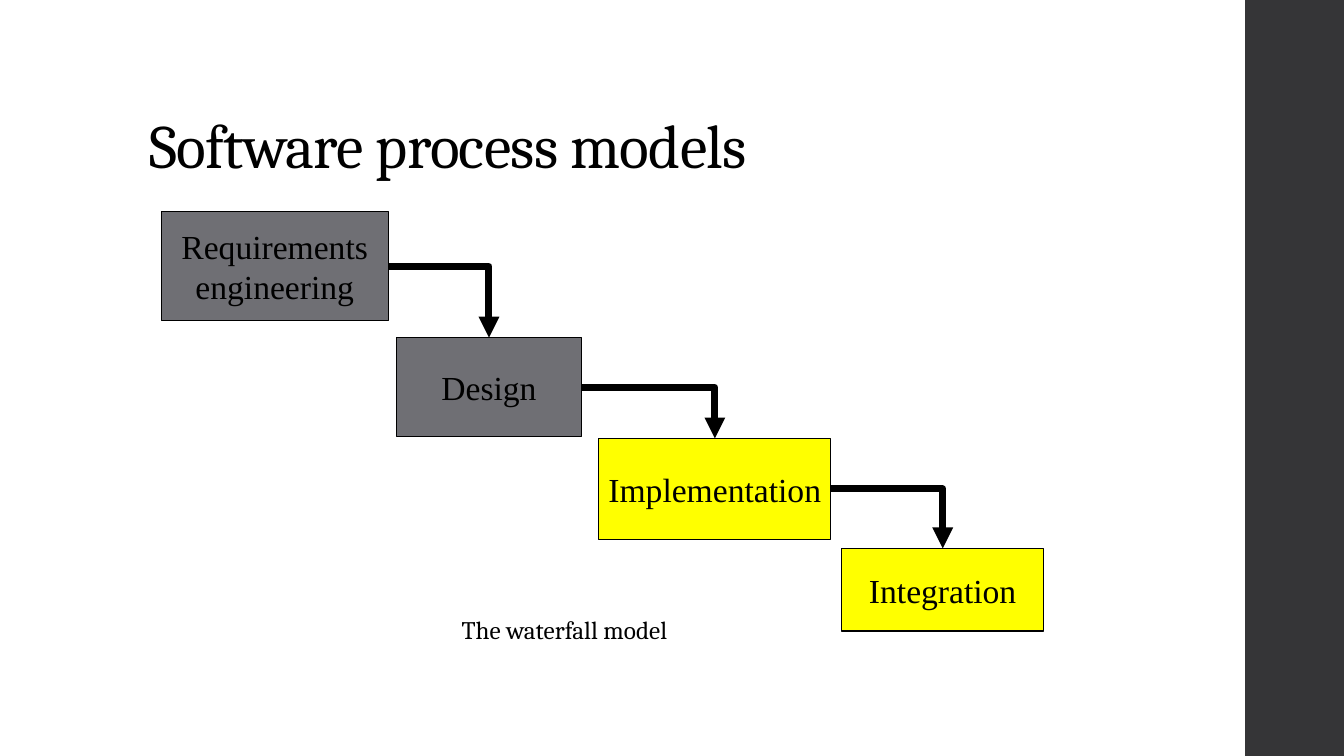
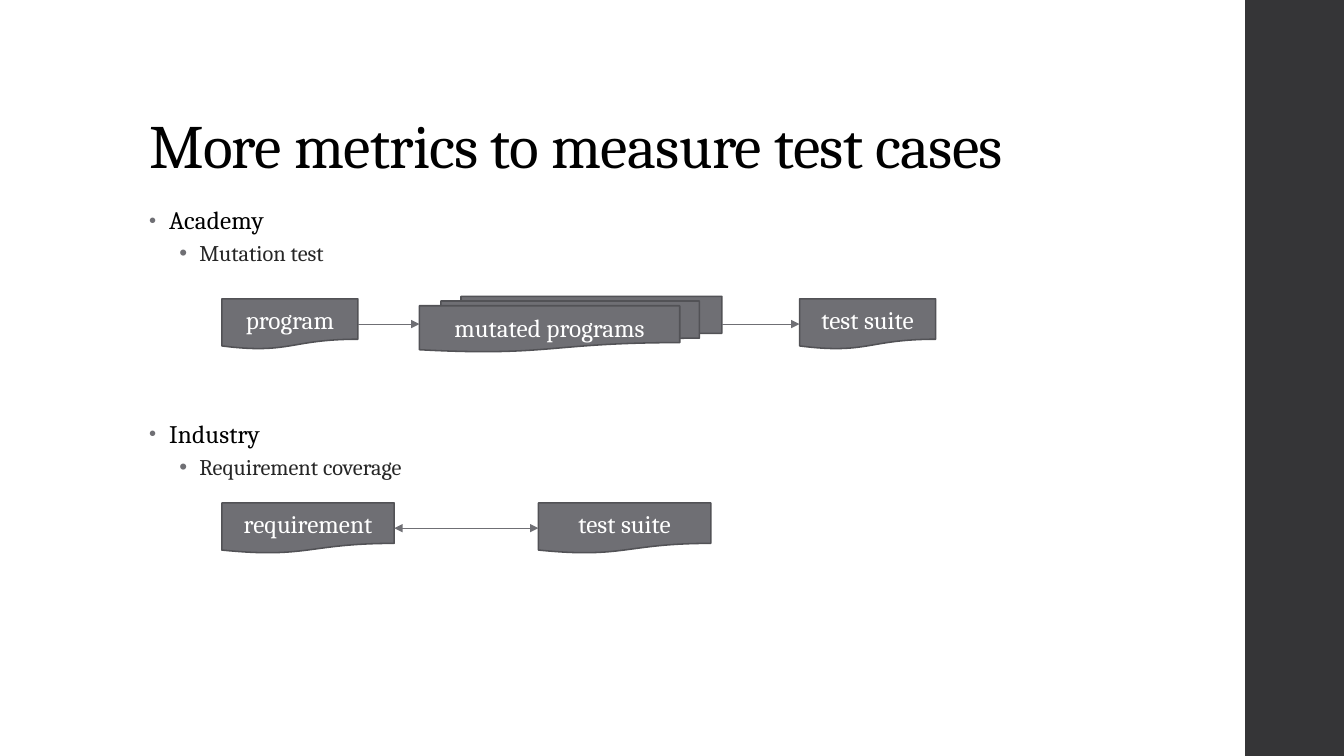
import lxml.etree
import pptx
import pptx.dml.color
import pptx.enum.shapes
import pptx.enum.text
import pptx.oxml.ns
import pptx.util

Inches, Pt = pptx.util.Inches, pptx.util.Pt
SHAPE = pptx.enum.shapes.MSO_SHAPE
LINK = pptx.enum.shapes.MSO_CONNECTOR
ANCHOR = pptx.enum.text.MSO_ANCHOR
CENTER = pptx.enum.text.PP_ALIGN.CENTER
qn = pptx.oxml.ns.qn

COLORS = {"black": "000000", "white": "FFFFFF", "band": "353537", "gray": "6F6F74",
          "edge": "525256", "yellow": "FFFF00", "dark": "262626"}
FONTS = {
    "title": {"name": "Cambria", "size": Pt(44), "color": "black", "spc": -50},
    "head": {"name": "Cambria", "size": Pt(18), "color": "black", "spc": 10},
    "sub": {"name": "Cambria", "size": Pt(16), "color": "dark"},
    "note": {"name": "Cambria", "size": Pt(18), "color": "black"},
    "step": {"name": "Times New Roman", "size": Pt(24), "color": "black"},
    "doc": {"name": "Cambria", "size": Pt(18), "color": "white"},
}
BULLETS = {"head": {"left": 0.2, "scale": 80}, "sub": {"left": 0.5, "scale": 100}}


def rgb(name):
    """Return the named colour."""
    return pptx.dml.color.RGBColor.from_string(COLORS[name])


def apply(target, values):
    """Set each value as an attribute of the target."""
    for key, value in values.items():
        setattr(target, key, value)


def write(frame, lines, frame_form, para_form):
    """Write (text, style) lines into a frame and return the paragraphs."""
    apply(frame, frame_form)
    for index, (text, style) in enumerate(lines):
        para = frame.add_paragraph() if index else frame.paragraphs[0]
        apply(para, para_form)
        run = para.add_run()
        run.text = text
        form = FONTS[style]
        apply(run.font, {key: form[key] for key in ("name", "size")})
        run.font.color.rgb = rgb(form["color"])
        if "spc" in form:
            run.font._element.set("spc", str(form["spc"]))
    return frame.paragraphs


def add_text(slide, box, lines, frame_form, para_form):
    """Add a text box and return its paragraphs."""
    shape = slide.shapes.add_textbox(*map(Inches, box))
    return write(shape.text_frame, lines, frame_form, para_form)


def add_box(slide, kind, box, fill, line=None, width=0.75):
    """Add a flat shape, outlined if a line colour is given."""
    shape = slide.shapes.add_shape(kind, *map(Inches, box))
    shape.shadow.inherit = False
    shape.fill.solid()
    shape.fill.fore_color.rgb = rgb(fill)
    if line:
        shape.line.color.rgb = rgb(line)
        shape.line.width = Pt(width)
    else:
        shape.line.fill.background()
    return shape


def add_link(slide, start, stop, color, width, bent=False, both=False):
    """Join the right side of one shape to the next with an arrow."""
    link = slide.shapes.add_connector(LINK.ELBOW if bent else LINK.STRAIGHT, 0, 0, 0, 0)
    link.begin_connect(start, 3)
    link.end_connect(stop, 0 if bent else 1)
    link.line.color.rgb = rgb(color)
    link.line.width = Pt(width)
    props = link._element.spPr
    if bent:
        props.find(qn("a:prstGeom")).set("prst", "bentConnector2")
    for tag in ("a:headEnd", "a:tailEnd") if both else ("a:tailEnd",):
        lxml.etree.SubElement(props.find(qn("a:ln")), qn(tag), type="triangle")
    lxml.etree.SubElement(props, qn("a:effectLst"))


def add_bullet(para, left, scale):
    """Give a paragraph a hanging gray bullet."""
    props = para._element.get_or_add_pPr()
    props.set("marL", str(Inches(left)))
    props.set("indent", str(Inches(-0.2)))
    color = lxml.etree.SubElement(props, qn("a:buClr"))
    lxml.etree.SubElement(color, qn("a:srgbClr"), val=COLORS["gray"])
    lxml.etree.SubElement(props, qn("a:buSzPct"), val=str(scale * 1000))
    lxml.etree.SubElement(props, qn("a:buFont"), typeface="Arial")
    lxml.etree.SubElement(props, qn("a:buChar"), char="•")


def add_slide(deck, title):
    """Add a blank slide with the side band and a title."""
    slide = deck.slides.add_slide(deck.slide_layouts[6])
    add_box(slide, SHAPE.RECTANGLE, (12.35, 0, 0.98, 7.5), "band")
    add_text(slide, (1.38, 0.4, 10.6, 1.45), [(title, "title")],
             {"word_wrap": True, "vertical_anchor": ANCHOR.BOTTOM}, {"line_spacing": 0.9})
    return slide


def add_steps(slide, box, steps):
    """Draw a cascade of steps joined by bent arrows."""
    last = None
    for text, fill, (left, top, width, height) in steps:
        place = (box[0] + left, box[1] + top, width, height)
        shape = add_box(slide, SHAPE.RECTANGLE, place, fill, "black")
        write(shape.text_frame, [(line, "step") for line in text.split("\n")],
              {"word_wrap": False, "vertical_anchor": ANCHOR.MIDDLE}, {"alignment": CENTER})
        if last:
            add_link(slide, last, shape, "black", 5, bent=True)
        last = shape


def add_topic(slide, box, head, sub):
    """Write a heading bullet with one bullet below it."""
    paras = add_text(slide, box, [(head, "head"), (sub, "sub")], {"word_wrap": True}, {})
    apply(paras[0], {"line_spacing": 0.95, "space_after": Pt(2)})
    apply(paras[1], {"line_spacing": 0.9, "space_before": Pt(3), "space_after": Pt(3)})
    for para, style in zip(paras, ("head", "sub")):
        add_bullet(para, **BULLETS[style])


def add_flow(slide, box, docs, both=False):
    """Draw a row of documents centred on the box and joined by arrows."""
    last = None
    for text, kind, left, width, height in docs:
        place = (box[0] + left, box[1] + (box[3] - height) / 2, width, height)
        shape = add_box(slide, kind, place, "gray", "edge", 1.1)
        write(shape.text_frame, [(text, "doc")],
              {"word_wrap": True, "vertical_anchor": ANCHOR.MIDDLE}, {"alignment": CENTER})
        if last:
            add_link(slide, last, shape, "gray", 0.75, both=both)
        last = shape


def add_models(deck):
    """Build the slide on process models."""
    slide = add_slide(deck, "Software process models")
    add_steps(slide, (1.6, 2.1), [
        ("Requirements\nengineering", "gray", (0, 0, 2.25, 1.08)),
        ("Design", "gray", (2.33, 1.25, 1.84, 0.98)),
        ("Implementation", "yellow", (4.34, 2.25, 2.3, 1)),
        ("Integration", "yellow", (6.75, 3.34, 2, 0.82)),
    ])
    add_text(slide, (4.48, 6.05, 2.62, 0.4), [("The waterfall model", "note")],
             {"word_wrap": False}, {})


def add_metrics(deck):
    """Build the slide on test metrics."""
    slide = add_slide(deck, "More metrics to measure test cases")
    page, stack = SHAPE.FLOWCHART_DOCUMENT, SHAPE.FLOWCHART_MULTIDOCUMENT
    add_topic(slide, (1.38, 2, 9.4, 0.8), "Academy", "Mutation test")
    add_flow(slide, (2.2, 2.94, 7.08, 0.55), [
        ("program", page, 0, 1.35, 0.5),
        ("mutated programs", stack, 1.96, 3, 0.55),
        ("test suite", page, 5.73, 1.35, 0.5),
    ])
    add_topic(slide, (1.38, 4.12, 9.4, 0.8), "Industry", "Requirement coverage")
    add_flow(slide, (2.2, 4.99, 4.85, 0.5), [
        ("requirement", page, 0, 1.71, 0.5),
        ("test suite", page, 3.14, 1.71, 0.5),
    ], both=True)


def main():
    """Build and save the deck."""
    deck = pptx.Presentation()
    apply(deck, {"slide_width": Inches(13.33), "slide_height": Inches(7.5)})
    add_models(deck)
    add_metrics(deck)
    deck.save("out.pptx")


if __name__ == "__main__":
    main()
